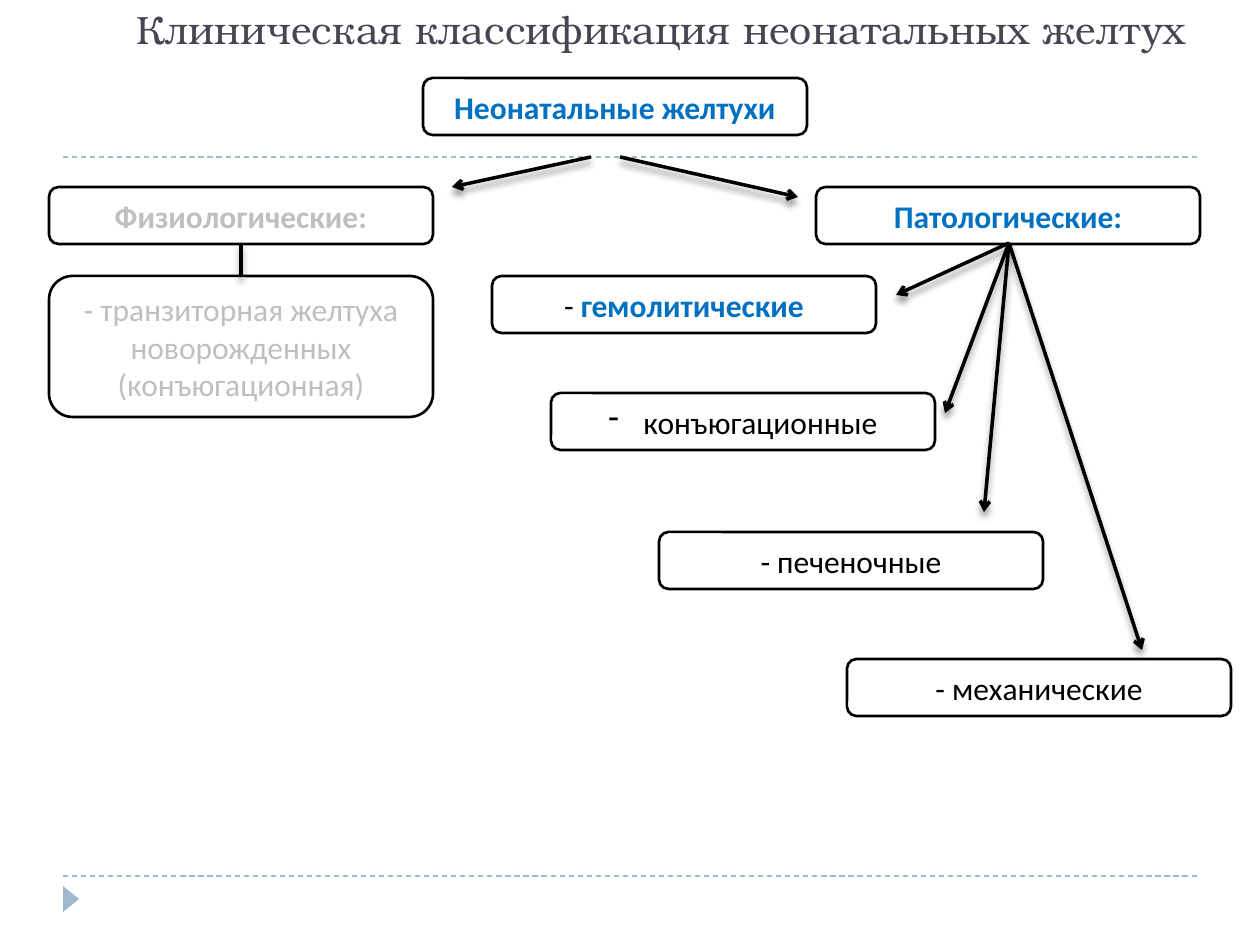
from lxml.etree import SubElement
from pptx import Presentation
from pptx.dml.color import RGBColor
from pptx.enum.dml import MSO_LINE
from pptx.enum.shapes import MSO_CONNECTOR, MSO_SHAPE
from pptx.enum.text import MSO_ANCHOR, MSO_AUTO_SIZE, PP_ALIGN
from pptx.oxml import parse_xml
from pptx.oxml.ns import nsdecls, qn
from pptx.util import Emu, Pt

PX = 914400 / 126
COLORS = {
    "title": "464653",
    "accent": "9FB8CD",
    "blue": "0070C0",
    "grey": "BFBFBF",
    "black": "000000",
    "white": "FFFFFF",
}
BOX_WIDTH, BOX_HEIGHT = 384, 57
SHADOW = (
    f'<a:effectLst {nsdecls("a")}><a:outerShdw blurRad="50800" dist="43180" '
    'dir="5400000" rotWithShape="0"><a:srgbClr val="000000">'
    '<a:alpha val="40000"/></a:srgbClr></a:outerShdw></a:effectLst>'
)


def px(*values):
    """Turn pixel lengths into EMU."""
    return [Emu(round(value * PX)) for value in values]


def add_line(start, end, color, width):
    line = slide.shapes.add_connector(MSO_CONNECTOR.STRAIGHT, *px(*start, *end))
    line.line.color.rgb = RGBColor.from_string(COLORS[color])
    line.line.width = Pt(width)
    return line


presentation = Presentation()
presentation.slide_width, presentation.slide_height = px(1260, 945)
slide = presentation.slides.add_slide(presentation.slide_layouts[6])

# Dashed rules and corner marker
for y in (876, 157):
    rule = add_line((63, y), (1197, y), "accent", 0.75)
    rule.line.dash_style = MSO_LINE.DASH
    SubElement(rule._element.spPr, qn("a:effectLst"))

marker = slide.shapes.add_shape(MSO_SHAPE.ISOSCELES_TRIANGLE, *px(58, 891, 26, 16))
marker.rotation = 90
marker.shadow.inherit = False
marker.fill.solid()
marker.fill.fore_color.rgb = RGBColor.from_string(COLORS["accent"])
marker.line.fill.background()

# Title
title = slide.shapes.add_textbox(*px(63, 0, 1197, 59))
title.text_frame.word_wrap = True
title.text_frame.vertical_anchor = MSO_ANCHOR.BOTTOM
title.text_frame.text = "Клиническая классификация неонатальных желтух"
paragraph = title.text_frame.paragraphs[0]
paragraph.alignment = PP_ALIGN.CENTER
font = paragraph.runs[0].font
font.name, font.size = "TeX Gyre Bonum", Pt(22.5)
font.color.rgb = RGBColor.from_string(COLORS["title"])

# Boxes: left, top, height, bullet, runs of (text, color, bold)
boxes = [
    (423, 78, BOX_HEIGHT, None, [("Неонатальные желтухи", "blue", True)]),
    (49, 187, BOX_HEIGHT, None, [("Физиологические:", "grey", True)]),
    (816, 187, BOX_HEIGHT, None, [("Патологические:", "blue", True)]),
    (49, 276, 141, None,
     [("- транзиторная желтуха новорожденных (конъюгационная)", "grey", False)]),
    (492, 276, BOX_HEIGHT, None,
     [("- ", "black", False), ("гемолитические", "blue", True)]),
    (551, 393, BOX_HEIGHT, "-", [(" конъюгационные", "black", False)]),
    (659, 532, BOX_HEIGHT, None, [("- печеночные", "black", False)]),
    (847, 659, BOX_HEIGHT, None, [("- механические", "black", False)]),
]
for left, top, height, bullet, runs in boxes:
    box = slide.shapes.add_shape(
        MSO_SHAPE.ROUNDED_RECTANGLE, *px(left, top, BOX_WIDTH, height))
    box.shadow.inherit = False
    box.fill.solid()
    box.fill.fore_color.rgb = RGBColor.from_string(COLORS["white"])
    box.line.color.rgb = RGBColor.from_string(COLORS["black"])
    box.line.width = Pt(1.5)
    text_frame = box.text_frame
    text_frame.word_wrap = True
    text_frame.auto_size = MSO_AUTO_SIZE.SHAPE_TO_FIT_TEXT
    paragraph = text_frame.paragraphs[0]
    paragraph.alignment = PP_ALIGN.CENTER
    for text, color, bold in runs:
        run = paragraph.add_run()
        run.text = text
        run.font.name, run.font.size, run.font.bold = "Calibri", Pt(18), bold
        run.font.color.rgb = RGBColor.from_string(COLORS[color])
    if bullet:
        properties = paragraph._p.get_or_add_pPr()
        indent = px(28)[0]
        properties.set("marL", str(indent))
        properties.set("indent", str(-indent))
        SubElement(properties, qn("a:buFontTx"))
        SubElement(properties, qn("a:buChar"), char=bullet)

# Branches: start, end, arrowhead
pathological = (1009, 243)
branches = [
    ((591, 157), (452, 187), True),
    ((620, 157), (798, 197), True),
    ((241, 243), (241, 276), False),
    (pathological, (896, 295), True),
    (pathological, (945, 413), True),
    (pathological, (984, 512), True),
    (pathological, (1142, 650), True),
]
for start, end, has_arrow in branches:
    branch = add_line(start, end, "black", 2)
    if has_arrow:
        SubElement(branch.line._get_or_add_ln(), qn("a:tailEnd"), type="arrow")
    branch._element.spPr.append(parse_xml(SHADOW))

presentation.save("out.pptx")
